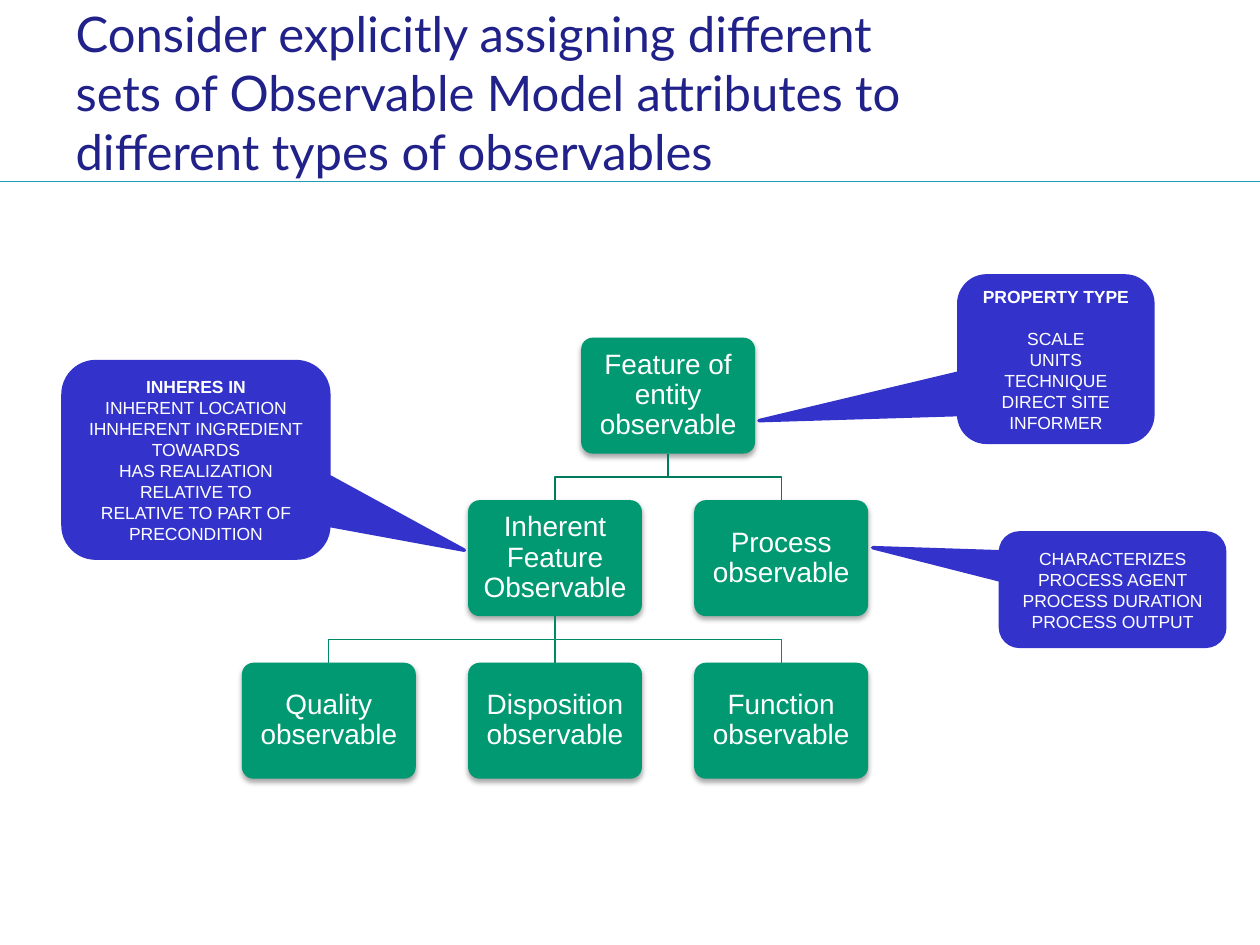
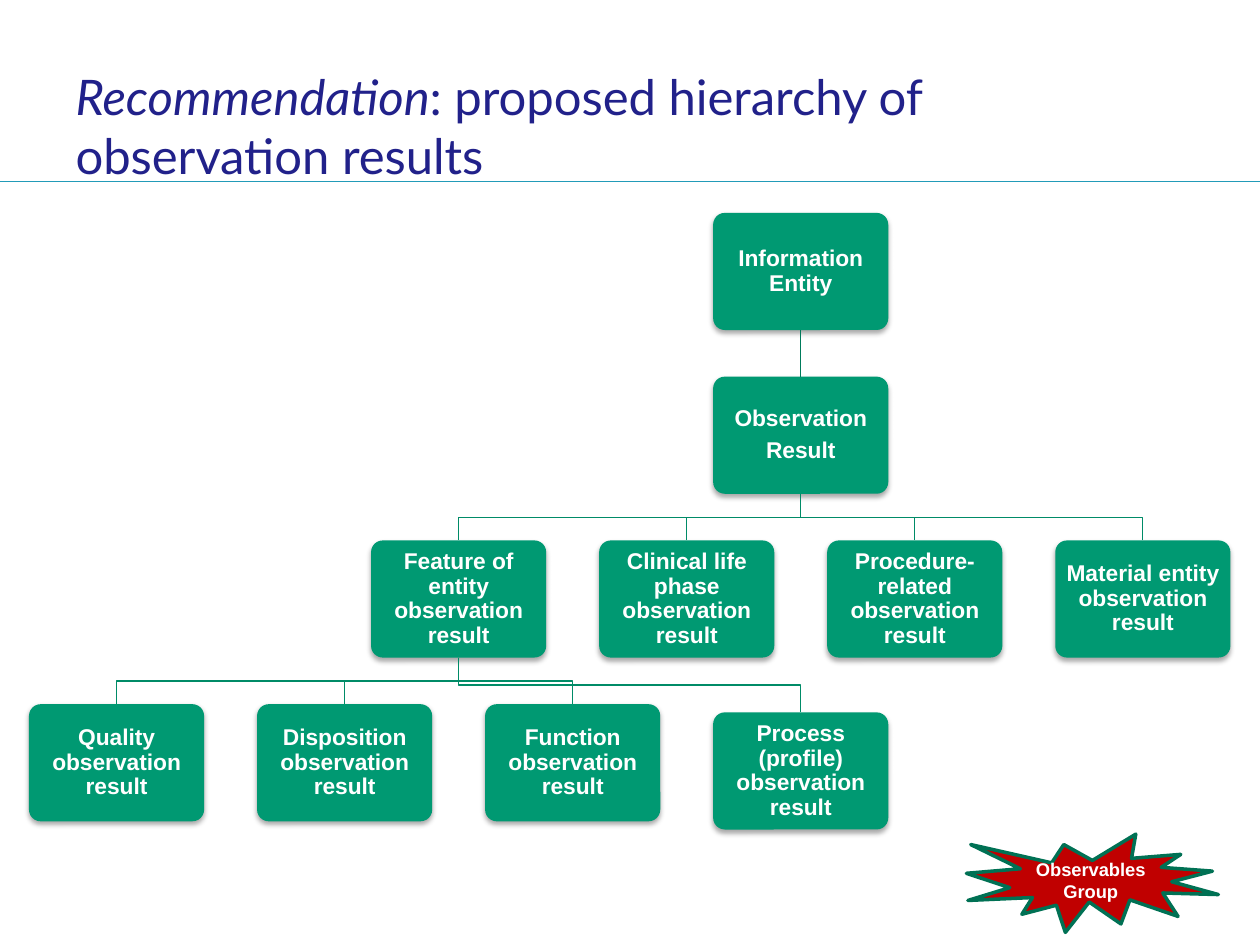
from dataclasses import dataclass
from typing import NamedTuple, Optional

from lxml.etree import SubElement
from pptx import Presentation
from pptx.dml.color import RGBColor
from pptx.enum.shapes import MSO_CONNECTOR as Connector, MSO_SHAPE as Preset
from pptx.enum.text import MSO_ANCHOR as Anchor, MSO_AUTO_SIZE as AutoSize, PP_ALIGN as Align
from pptx.oxml.ns import qn
from pptx.util import Inches, Pt

# Shared look
WHITE = RGBColor(0xFF, 0xFF, 0xFF)
TITLE_BLUE = RGBColor(0x21, 0x21, 0x8A)
RULE_BLUE = RGBColor(0x22, 0x9B, 0xB8)
BOX_GREEN = RGBColor(0x00, 0x99, 0x72)
ROOT_LINK = RGBColor(0x00, 0x7B, 0x5B)
LOWER_LINK = RGBColor(0x00, 0x8B, 0x67)
CALLOUT_BLUE = RGBColor(0x33, 0x33, 0xCC)
SEAL_RED = RGBColor(0xC0, 0x00, 0x00)
SEAL_EDGE = RGBColor(0x00, 0x71, 0x54)
TITLE_FONT, BODY_FONT = "Lato", "Arial"
SLIDE_WIDTH, SLIDE_HEIGHT = Inches(10), Inches(7.5)
TITLE_ONLY_LAYOUT = 5
TOP, BOTTOM = 0, 2


class Span(NamedTuple):
    text: str
    bold: bool = False
    italic: bool = False
    gap_before: float = 0


class Area(NamedTuple):
    """A rectangle in percent of the slide's size."""
    left: float
    top: float
    width: float
    height: float

    def lengths(self) -> tuple:
        return wide(self.left), high(self.top), wide(self.width), high(self.height)


@dataclass(frozen=True)
class Node:
    text: str
    column: float
    row: float
    parent: Optional[str] = None


@dataclass(frozen=True)
class Tree:
    """Boxes on a grid: the first cell's area, and the steps between cells."""
    cell: Area
    column_step: float
    row_step: float
    size: float
    inset: float
    bold: bool
    nodes: tuple

    def area(self, node: Node) -> Area:
        return self.cell._replace(left=self.cell.left + node.column * self.column_step,
                                  top=self.cell.top + node.row * self.row_step)


@dataclass(frozen=True)
class Callout:
    area: Area
    tip: tuple
    spans: tuple


def wide(percent: float) -> int:
    return round(SLIDE_WIDTH * percent / 100)


def high(percent: float) -> int:
    return round(SLIDE_HEIGHT * percent / 100)


def write_text(shape, paras, *, font: str, size: float, color: RGBColor, align=Align.CENTER,
               inset: Optional[float] = None, line_spacing: Optional[float] = None,
               space_after: Optional[float] = None) -> None:
    """Fill a shape with paragraphs, each a sequence of spans."""
    frame = shape.text_frame
    frame.word_wrap = True
    frame.auto_size = AutoSize.NONE
    frame.vertical_anchor = Anchor.MIDDLE
    if inset is not None:
        frame.margin_left = frame.margin_right = Inches(inset)
        frame.margin_top = frame.margin_bottom = Inches(inset)
    for index, spans in enumerate(paras):
        para = frame.add_paragraph() if index else frame.paragraphs[0]
        para.alignment = align
        if line_spacing:
            para.line_spacing = line_spacing
        if space_after:
            para.space_after = Pt(space_after)
        if spans[0].gap_before:
            para.space_before = Pt(spans[0].gap_before)
        for span in spans:
            run = para.add_run()
            run.text = span.text
            run.font.name, run.font.size = font, Pt(size)
            run.font.bold, run.font.italic = span.bold, span.italic
            run.font.color.rgb = color


def add_preset(page, preset, area: Area, fill: RGBColor, edge: Optional[RGBColor] = None):
    shape = page.shapes.add_shape(preset, *area.lengths())
    shape.shadow.inherit = False
    shape.fill.solid()
    shape.fill.fore_color.rgb = fill
    if edge is None:
        shape.line.fill.background()
    else:
        shape.line.color.rgb = edge
        shape.line.width = Pt(2)
    return shape


def add_soft_shadow(shape) -> None:
    effects = shape._element.spPr.find(qn("a:effectLst"))
    shadow = SubElement(effects, qn("a:outerShdw"), blurRad=str(Pt(3.1)), dist=str(Pt(1.8)),
                        dir="5400000", rotWithShape="0")
    black = SubElement(shadow, qn("a:srgbClr"), val="000000")
    SubElement(black, qn("a:alpha"), val="35000")


def add_line(page, start: tuple, end: tuple, color: RGBColor):
    line = page.shapes.add_connector(Connector.STRAIGHT, *start, *end)
    line.line.color.rgb = color
    line.line.width = Pt(0.75)
    SubElement(line._element.spPr, qn("a:effectLst"))
    return line


def add_page(deck, title: tuple, top: float, height: float):
    """Start a slide with its title and the rule beneath it."""
    page = deck.slides.add_slide(deck.slide_layouts[TITLE_ONLY_LAYOUT])
    add_line(page, (0, high(19.2)), (SLIDE_WIDTH, high(19.2)), RULE_BLUE)
    box = page.shapes.title
    box.left, box.top, box.width, box.height = Area(5, top, 72.3, height).lengths()
    write_text(box, [title], font=TITLE_FONT, size=28, color=TITLE_BLUE,
               align=Align.LEFT, inset=0.1)
    return page


def link_boxes(page, parent, child, color: RGBColor) -> None:
    """Run down from the parent's bottom to the child's top, bending halfway."""
    start_x, start_y = parent.left + parent.width // 2, parent.top + parent.height
    end_x, end_y = child.left + child.width // 2, child.top
    if start_x == end_x:
        line = add_line(page, (start_x, start_y), (end_x, end_y), color)
        line.begin_connect(parent, BOTTOM)
        line.end_connect(child, TOP)
        return
    middle = (start_y + end_y) // 2
    builder = page.shapes.build_freeform(start_x, start_y)
    builder.add_line_segments([(start_x, middle), (end_x, middle), (end_x, end_y)], close=False)
    elbow = builder.convert_to_shape()
    elbow.shadow.inherit = False
    elbow.fill.background()
    elbow.line.color.rgb = color
    elbow.line.width = Pt(0.75)


def draw_tree(page, tree: Tree) -> None:
    boxes = {}
    for node in tree.nodes:
        box = add_preset(page, Preset.ROUNDED_RECTANGLE, tree.area(node), BOX_GREEN)
        box.adjustments[0] = 0.1
        add_soft_shadow(box)
        paras = [[Span(line, bold=tree.bold)] for line in node.text.split("\n")]
        write_text(box, paras, font=BODY_FONT, size=tree.size, color=WHITE, inset=tree.inset,
                   line_spacing=0.9, space_after=0.35 * tree.size)
        boxes[node.text] = box
    root = tree.nodes[0].text
    for node in tree.nodes[1:]:
        color = ROOT_LINK if node.parent == root else LOWER_LINK
        link_boxes(page, boxes[node.parent], boxes[node.text], color)


def draw_callout(page, callout: Callout) -> None:
    shape = add_preset(page, Preset.ROUNDED_RECTANGULAR_CALLOUT, callout.area,
                       CALLOUT_BLUE, CALLOUT_BLUE)
    shape.adjustments[0], shape.adjustments[1] = callout.tip
    write_text(shape, [[span] for span in callout.spans], font=BODY_FONT, size=10, color=WHITE)


# Slide 1: observables and their attributes
FEATURE = "Feature of entity observable"
INHERENT = "Inherent Feature Observable"
OBSERVABLES = Tree(
    cell=Area(19.2, 35.73, 13.8, 12.27), column_step=17.95, row_step=17.2,
    size=16, inset=0.07, bold=False,
    nodes=(
        Node(FEATURE, 1.5, 0),
        Node(INHERENT, 1, 1, FEATURE),
        Node("Process observable", 2, 1, FEATURE),
        Node("Quality observable", 0, 2, INHERENT),
        Node("Disposition observable", 1, 2, INHERENT),
        Node("Function observable", 2, 2, INHERENT),
    ))
CALLOUTS = (
    Callout(Area(76.1, 29.2, 15.4, 17.6), (-1.53, 0.37), (
        Span("PROPERTY TYPE", bold=True), Span("SCALE", gap_before=12), Span("UNITS"),
        Span("TECHNIQUE"), Span("DIRECT SITE"), Span("INFORMER"))),
    Callout(Area(79.4, 56.4, 17.8, 12), (-1.07, -0.37), (
        Span("CHARACTERIZES"), Span("PROCESS AGENT"), Span("PROCESS DURATION"),
        Span("PROCESS OUTPUT"))),
    Callout(Area(5, 38.27, 21.1, 20.8), (1.01, 0.46), (
        Span("INHERES IN", bold=True), Span("INHERENT LOCATION"), Span("IHNHERENT INGREDIENT"),
        Span("TOWARDS"), Span("HAS REALIZATION"), Span("RELATIVE TO"),
        Span("RELATIVE TO PART OF"), Span("PRECONDITION"))),
)

# Slide 2: hierarchy of observation results
ENTITY = "Information Entity"
RESULT = "Observation\nResult"
FEATURE_RESULT = "Feature of entity observation result"
RESULTS = Tree(
    cell=Area(2.3, 22.53, 13.9, 12.4), column_step=18.1, row_step=17.33,
    size=13, inset=0.05, bold=True,
    nodes=(
        Node(ENTITY, 3, 0),
        Node(RESULT, 3, 1, ENTITY),
        Node(FEATURE_RESULT, 1.5, 2, RESULT),
        Node("Clinical life phase observation result", 2.5, 2, RESULT),
        Node("Procedure-related observation result", 3.5, 2, RESULT),
        Node("Material entity observation result", 4.5, 2, RESULT),
        Node("Quality observation result", 0, 3, FEATURE_RESULT),
        Node("Disposition observation result", 1, 3, FEATURE_RESULT),
        Node("Function observation result", 2, 3, FEATURE_RESULT),
        Node("Process (profile) observation result", 3, 3.05, FEATURE_RESULT),
    ))


def build_observables(deck) -> None:
    title = Span("Consider explicitly assigning different sets of Observable Model "
                 "attributes to different types of observables")
    page = add_page(deck, (title,), top=0.8, height=17.87)
    draw_tree(page, OBSERVABLES)
    for callout in CALLOUTS:
        draw_callout(page, callout)


def build_results(deck) -> None:
    title = (Span("Recommendation", italic=True),
             Span(": proposed hierarchy of observation results"))
    page = add_page(deck, title, top=7.73, height=11.07)
    draw_tree(page, RESULTS)
    seal = add_preset(page, Preset.EXPLOSION1, Area(76.7, 88.27, 20, 10.4), SEAL_RED, SEAL_EDGE)
    write_text(seal, [[Span("Observables Group", bold=True)]],
               font=BODY_FONT, size=10.5, color=WHITE)


def main() -> None:
    deck = Presentation()
    deck.slide_width, deck.slide_height = SLIDE_WIDTH, SLIDE_HEIGHT
    build_observables(deck)
    build_results(deck)
    deck.save("out.pptx")


if __name__ == "__main__":
    main()
